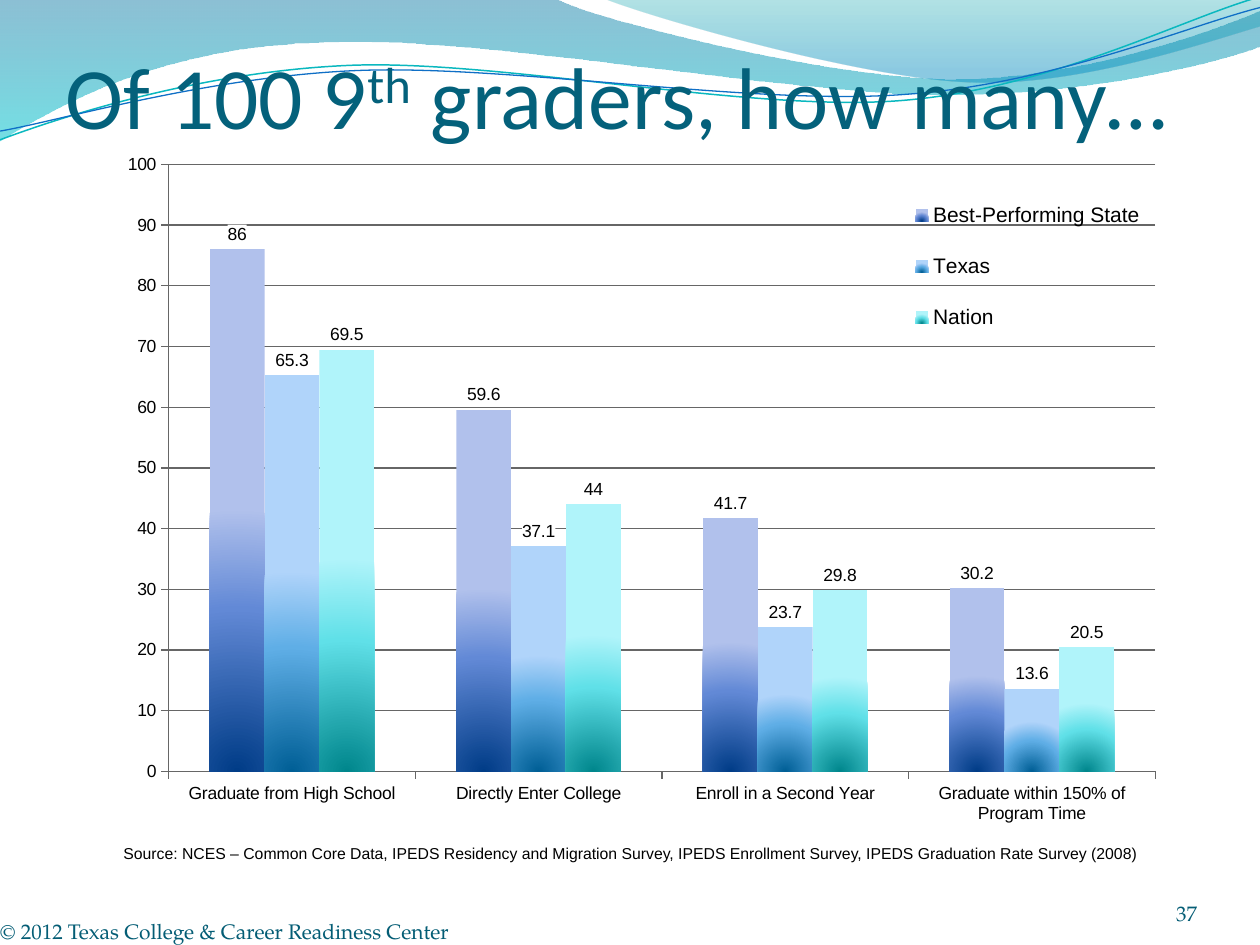
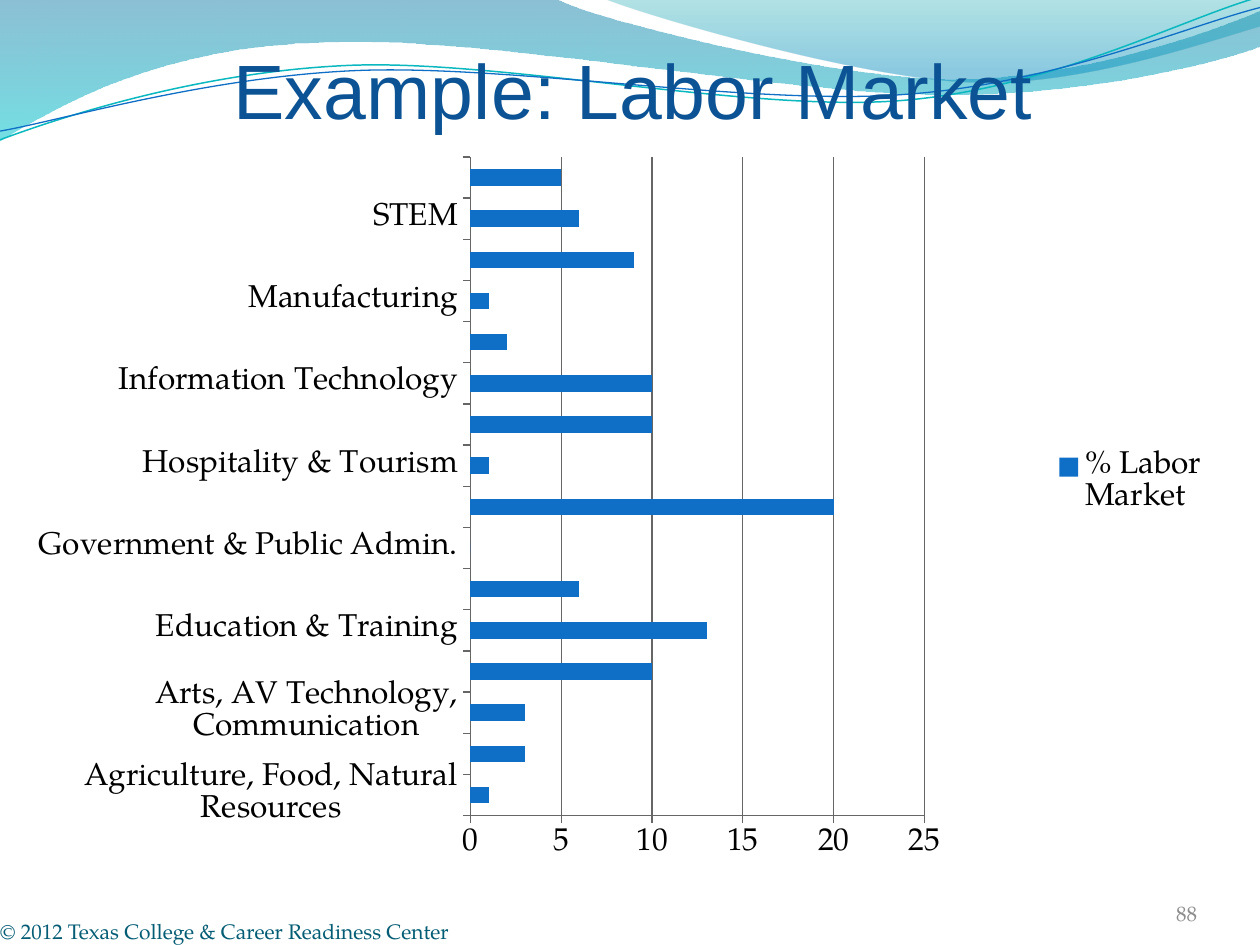
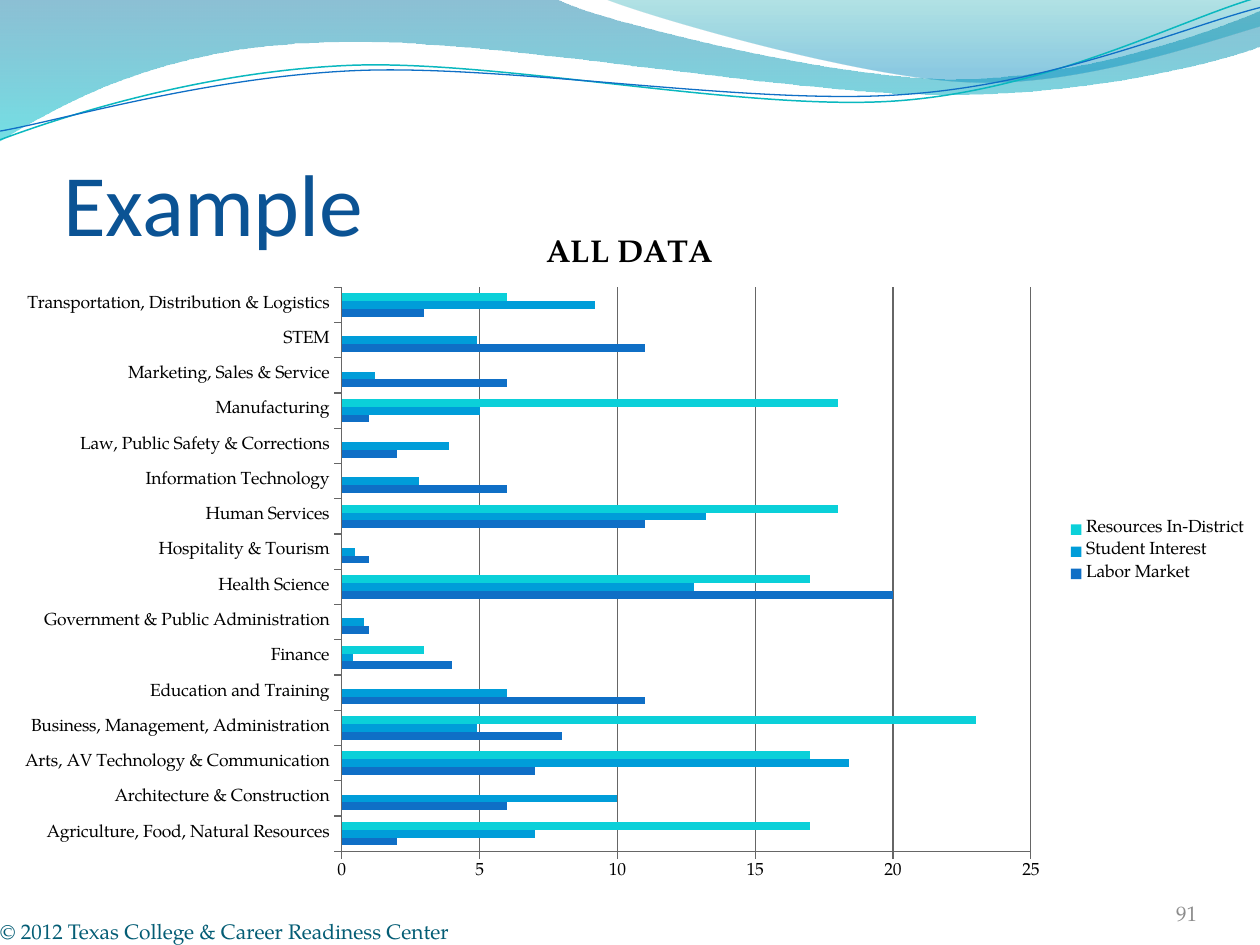
import lxml.etree
import pptx
import pptx.chart.data
import pptx.dml.color
import pptx.enum.chart
import pptx.enum.shapes
import pptx.enum.text
import pptx.oxml
import pptx.oxml.ns
import pptx.util

Pt = pptx.util.Pt
qn = pptx.oxml.ns.qn
COLORS = {
    "title": "04617B", "example": "0B5394", "footer": "045D75", "muted": "8C8C8C",
    "text": "000000", "paper": "FFFFFF", "grid": "666666",
    "blue": "0F6FC6", "sky": "009DD9", "aqua": "0BD0D9", "teal_line": "0AB8BF",
}
SERIF, SANS, HEADING = "TeX Gyre Pagella", "Arial", "Calibri"

BANDS = [
    ((0, 0),
     [[(317, -1)], [(343, 12), (478, 45), (546, 45)], [(614, 45), (690, 19), (720, 6)],
      [(721, 26)], [(708, 32), (626, 55), (537, 54)], [(447, 54), (275, 20), (185, 24)],
      [(93, 26), (33, 60), (-1, 81)], [(0, 0)]],
     [(0, "0074A1", 45), (1, "00C6CF", 55)]),
    ((345, -1),
     [[(366, 8), (491, 45), (554, 47)], [(616, 50), (692, 23), (720, 15)], [(720, 0)],
      [(345, -1)]],
     [(0, "00A1A9", 30), (0.8, "008BBF", 45)]),
]
STRANDS = [
    ((0, 79.9),
     [[(34.6, 67), (113.8, 41), (199.4, 37.4)], [(284.4, 33.8), (427, 64.1), (513.4, 57.6)],
      [(599.8, 51.1), (675.4, 10.8), (718.6, -1.4)]], "teal_line", 0.85),
    ((0, 74.9),
     [[(33.8, 69.1), (118.1, 43.9), (203.8, 40.3)], [(290.2, 36.7), (429.8, 60.5), (516.2, 54)],
      [(601.9, 48.2), (677.5, 15.1), (720, 4.3)]], "blue", 0.75),
]

PIPELINE_STAGES = ["Graduate from High School", "Directly Enter College",
                   "Enroll in a Second Year", "Graduate within 150% of Program Time"]
PIPELINE = [("Best-Performing State", "blue", [86, 59.6, 41.7, 30.2]),
            ("Texas", "sky", [65.3, 37.1, 23.7, 13.6]),
            ("Nation", "aqua", [69.5, 44, 29.8, 20.5])]
PIPELINE_GLOWS = [("003C87", "6289D6", "B1C1EC"), ("005F96", "5FAEE6", "B0D4FA"),
                  ("00868C", "60E0E8", "B0F4FA")]

LABOR_CLUSTERS = [
    "Agriculture, Food, Natural Resources", "Architecture & Construction",
    "Arts, AV Technology, Communication", "Business, Management, Admin.",
    "Education & Training", "Finance", "Government & Public Admin.", "Health Science",
    "Hospitality & Tourism", "Human Services", "Information Technology",
    "Law, Public Safety & Security", "Manufacturing", "Marketing, Sales & Service",
    "STEM", "Transportation, Distribution, Logistics"]
LABOR = [("% Labor Market", "blue", [1, 3, 3, 10, 13, 6, 0, 20, 1, 10, 10, 2, 1, 9, 6, 5])]

ALL_CLUSTERS = [
    "Agriculture, Food, Natural Resources", "Architecture & Construction",
    "Arts, AV Technology & Communication", "Business, Management, Administration",
    "Education and Training", "Finance", "Government & Public Administration",
    "Health Science", "Hospitality & Tourism", "Human Services", "Information Technology",
    "Law, Public Safety & Corrections", "Manufacturing", "Marketing, Sales & Service",
    "STEM", "Transportation, Distribution & Logistics"]
ALL_DATA = [
    ("Labor Market", "blue", [2, 6, 7, 8, 11, 4, 1, 20, 1, 11, 6, 2, 1, 6, 11, 3]),
    ("Student Interest", "sky",
     [7, 10, 18.4, 4.9, 6, 0.4, 0.8, 12.8, 0.5, 13.2, 2.8, 3.9, 5, 1.2, 4.9, 9.2]),
    ("Resources In-District", "aqua",
     [17, None, 17, 23, None, 3, None, 17, None, 18, None, None, 18, None, None, 6]),
]

PIPELINE_BOX = (60.5, 80.6, 611.3, 398.2)
LABOR_BOX = (12, 0, 696, 504)
ALL_DATA_BOX = (0, 120.2, 720, 390.3)


def rgb(name):
    """Return the palette colour, or the hex string itself, as RGB."""
    return pptx.dml.color.RGBColor.from_string(COLORS.get(name, name))


def style_font(font, size, face, color="text", bold=False):
    """Set size, face, colour and weight of a font."""
    font.size, font.name, font.bold = Pt(size), face, bold
    font.color.rgb = rgb(color)


def add_outline(slide, start, segments, close):
    """Draw a freeform of lines and Bézier curves without shadow."""
    builder = slide.shapes.build_freeform(*map(Pt, start))
    builder.add_line_segments([(Pt(x), Pt(y)) for segment in segments for x, y in segment],
                              close=close)
    outline = builder.convert_to_shape()
    outline.shadow.inherit = False
    steps = iter(outline.element.xpath(".//a:path/a:lnTo"))
    for segment in segments:
        first, *others = [next(steps) for _ in segment]
        if others:
            curve = lxml.etree.Element(qn("a:cubicBezTo"))
            first.addprevious(curve)
            for step in (first, *others):
                curve.append(step[0])
                step.getparent().remove(step)
    return outline


def add_waves(master, slide):
    """Draw the wave header and move it to the back of the master."""
    waves = []
    for start, segments, stops in BANDS:
        band = add_outline(slide, start, segments, True)
        band.line.fill.background()
        band.fill.gradient()
        band.fill.gradient_angle = 270
        for stop, (position, color, _) in zip(band.fill.gradient_stops, stops):
            stop.position, stop.color.rgb = position, rgb(color)
        tints = band.element.xpath(".//a:gradFill//a:srgbClr")
        for tint, (_, _, opacity) in zip(tints, stops):
            lxml.etree.SubElement(tint, qn("a:alpha"), val=str(opacity * 1000))
        waves.append(band)
    for start, segments, color, width in STRANDS:
        strand = add_outline(slide, start, segments, False)
        strand.fill.background()
        strand.line.color.rgb, strand.line.width = rgb(color), Pt(width)
        waves.append(strand)
    for depth, wave in enumerate(waves, 2):
        wave.element.xpath("p:nvSpPr/p:cNvPr")[0].set("id", str(100 + depth))
        master.shapes.element.insert(depth, wave.element)


def add_title(slide, box, parts, color):
    """Fill the title placeholder run by run and return it."""
    title = slide.shapes.title
    title.left, title.top, title.width, title.height = map(Pt, box)
    frame = title.text_frame
    frame.word_wrap = True
    frame.auto_size = pptx.enum.text.MSO_AUTO_SIZE.NONE
    frame.vertical_anchor = pptx.enum.text.MSO_ANCHOR.BOTTOM
    frame.margin_left = frame.margin_right = frame.margin_bottom = 0
    frame.margin_top = Pt(3.6)
    frame.paragraphs[0].alignment = pptx.enum.text.PP_ALIGN.LEFT
    for part in parts:
        run = frame.paragraphs[0].add_run()
        run.text = part
        style_font(run.font, 50, HEADING, color)
    return title


def add_footer_text(slide, box, text, color, align):
    """Add a bottom-anchored footer line."""
    footer = slide.shapes.add_textbox(*map(Pt, box))
    frame = footer.text_frame
    frame.word_wrap = True
    frame.vertical_anchor = pptx.enum.text.MSO_ANCHOR.BOTTOM
    frame.margin_left = frame.margin_right = frame.margin_top = frame.margin_bottom = 0
    frame.paragraphs[0].alignment = align
    run = frame.paragraphs[0].add_run()
    run.text = text
    style_font(run.font, 12, SERIF, color)


def add_footers(slide, number, color):
    """Add the copyright line and the slide number."""
    align = pptx.enum.text.PP_ALIGN
    add_footer_text(slide, (0, 510.5, 720, 28.8),
                    "© 2012 Texas College & Career Readiness Center", "footer", align.LEFT)
    add_footer_text(slide, (624, 500.4, 60, 28.8), number, color, align.RIGHT)


def add_source(slide, text):
    """Add the white source strip under the chart."""
    strip = slide.shapes.add_shape(pptx.enum.shapes.MSO_SHAPE.RECTANGLE,
                                   *map(Pt, (0, 478.8, 720, 34.5)))
    strip.shadow.inherit = False
    strip.fill.solid()
    strip.fill.fore_color.rgb = rgb("paper")
    strip.line.fill.background()
    frame = strip.text_frame
    frame.word_wrap = True
    frame.vertical_anchor = pptx.enum.text.MSO_ANCHOR.TOP
    frame.paragraphs[0].alignment = pptx.enum.text.PP_ALIGN.CENTER
    run = frame.paragraphs[0].add_run()
    run.text = text
    style_font(run.font, 9, SANS)


def set_layout(chart, part_name, index, chart_box, place, inner=False):
    """Place a chart part, given in slide points, within the chart area."""
    part = chart.element.xpath(f"c:chart/c:{part_name}")[0]
    for automatic in part.xpath("c:layout"):
        part.remove(automatic)
    layout = lxml.etree.Element(qn("c:layout"))
    manual = lxml.etree.SubElement(layout, qn("c:manualLayout"))
    if inner:
        lxml.etree.SubElement(manual, qn("c:layoutTarget"), val="inner")
    for axis in "xy":
        lxml.etree.SubElement(manual, qn(f"c:{axis}Mode"), val="edge")
    left, top, width, height = chart_box
    for key, value, origin, extent in zip("xywh", place, (left, top, 0, 0),
                                          (width, height, width, height)):
        lxml.etree.SubElement(manual, qn(f"c:{key}"), val=f"{(value - origin) / extent:.5f}")
    part.insert(index, layout)


def add_bars(slide, kind, box, clusters, rows, plot_box, size, face, top, unit):
    """Add a clustered chart with legend, axes and gridlines."""
    data = pptx.chart.data.CategoryChartData()
    data.categories = clusters
    for name, _, values in rows:
        data.add_series(name, values)
    chart = slide.shapes.add_chart(kind, *map(Pt, box), data).chart
    style_font(chart.font, size, face)
    chart.has_title = False
    chart.has_legend = True
    chart.legend.position = pptx.enum.chart.XL_LEGEND_POSITION.RIGHT
    chart.legend.include_in_layout = False
    bars = chart.plots[0]
    bars.gap_width, bars.overlap, bars.vary_by_categories = 150, 0, False
    for series, (_, color, _) in zip(bars.series, rows):
        series.format.fill.solid()
        series.format.fill.fore_color.rgb = rgb(color)
    values_axis = chart.value_axis
    values_axis.minimum_scale, values_axis.maximum_scale = 0, top
    values_axis.major_unit = unit
    values_axis.has_major_gridlines = True
    for line in (values_axis.format.line, chart.category_axis.format.line,
                 values_axis.major_gridlines.format.line):
        line.color.rgb, line.width = rgb("grid"), Pt(0.75)
    for axis in (values_axis, chart.category_axis):
        axis.major_tick_mark = pptx.enum.chart.XL_TICK_MARK.OUTSIDE
    set_layout(chart, "plotArea", 0, box, plot_box, inner=True)
    return chart


def add_chart_title(chart, text, size, face, color="text", bold=False):
    """Give the chart its heading."""
    chart.has_title = True
    run = chart.chart_title.text_frame.paragraphs[0].add_run()
    run.text = text
    style_font(run.font, size, face, color, bold)
    chart.chart_title.include_in_layout = False


def add_glows(chart, glows):
    """Replace solid bar fills by gradients rising from the foot of each bar."""
    for solid, glow in zip(chart.element.xpath(".//c:ser/c:spPr/a:solidFill"), glows):
        stops = "".join(f'<a:gs pos="{position}"><a:srgbClr val="{color}"/></a:gs>'
                        for position, color in zip((0, 62000, 100000), glow))
        gradient = pptx.oxml.parse_xml(
            f'<a:gradFill {pptx.oxml.ns.nsdecls("a")} rotWithShape="1"><a:gsLst>{stops}</a:gsLst>'
            '<a:path path="circle"><a:fillToRect l="50000" t="100000" r="50000" b="0"/></a:path>'
            '</a:gradFill>')
        solid.getparent().replace(solid, gradient)


def add_value_labels(chart):
    """Show values above the bars on a white ground."""
    for series in chart.plots[0].series:
        labels = series.data_labels
        labels.show_value = True
        labels.position = pptx.enum.chart.XL_LABEL_POSITION.OUTSIDE_END
        style_font(labels.font, 10, SANS)
    for text_style in chart.element.xpath(".//c:ser/c:dLbls/c:txPr"):
        text_style.addprevious(pptx.oxml.parse_xml(
            f'<c:spPr {pptx.oxml.ns.nsdecls("c", "a")}><a:solidFill>'
            f'<a:srgbClr val="{COLORS["paper"]}"/></a:solidFill></c:spPr>'))


def main():
    """Build the three slides and save them."""
    deck = pptx.Presentation()
    deck.slide_width, deck.slide_height = Pt(720), Pt(540)
    title_only, blank = deck.slide_layouts[5], deck.slide_layouts[6]
    kinds = pptx.enum.chart.XL_CHART_TYPE

    pipeline = deck.slides.add_slide(title_only)
    add_waves(deck.slide_master, pipeline)
    heading = add_title(pipeline, (37.5, 16, 648, 68),
                        ["Of 100 9", "th", " graders, how many…"], "title")
    heading.element.xpath(".//a:rPr")[1].set("baseline", "30000")
    add_source(pipeline, "Source: NCES – Common Core Data, IPEDS Residency and Migration Survey, "
                         "IPEDS Enrollment Survey, IPEDS Graduation Rate Survey (2008)")
    chart = add_bars(pipeline, kinds.COLUMN_CLUSTERED, PIPELINE_BOX, PIPELINE_STAGES, PIPELINE,
                     (96.4, 94, 563.8, 346.9), 10, SANS, 100, 10)
    add_glows(chart, PIPELINE_GLOWS)
    add_value_labels(chart)
    chart.legend.include_in_layout = True
    style_font(chart.legend.font, 12, SANS)
    set_layout(chart, "legend", 1, PIPELINE_BOX, (517, 100, 140.6, 104))
    add_footers(pipeline, "37", "footer")

    labor = deck.slides.add_slide(blank)
    chart = add_bars(labor, kinds.BAR_CLUSTERED, LABOR_BOX, LABOR_CLUSTERS, LABOR,
                     (268.8, 89.7, 259.6, 376.5), 18, SERIF, 25, 5)
    add_chart_title(chart, "Example: Labor Market", 44, SANS, "example")
    set_layout(chart, "title", 1, LABOR_BOX, (125.4, 15.6))
    set_layout(chart, "legend", 1, LABOR_BOX, (597, 253.5, 98, 45))
    add_footers(labor, "88", "muted")

    overview = deck.slides.add_slide(title_only)
    add_title(overview, (36, 55, 648, 90), ["Example"], "example")
    chart = add_bars(overview, kinds.BAR_CLUSTERED, ALL_DATA_BOX, ALL_CLUSTERS, ALL_DATA,
                     (195.3, 164.2, 393.8, 322.4), 10, SERIF, 25, 5)
    add_chart_title(chart, "ALL DATA", 18, SERIF, bold=True)
    add_footers(overview, "91", "muted")

    deck.save("out.pptx")


if __name__ == "__main__":
    main()
